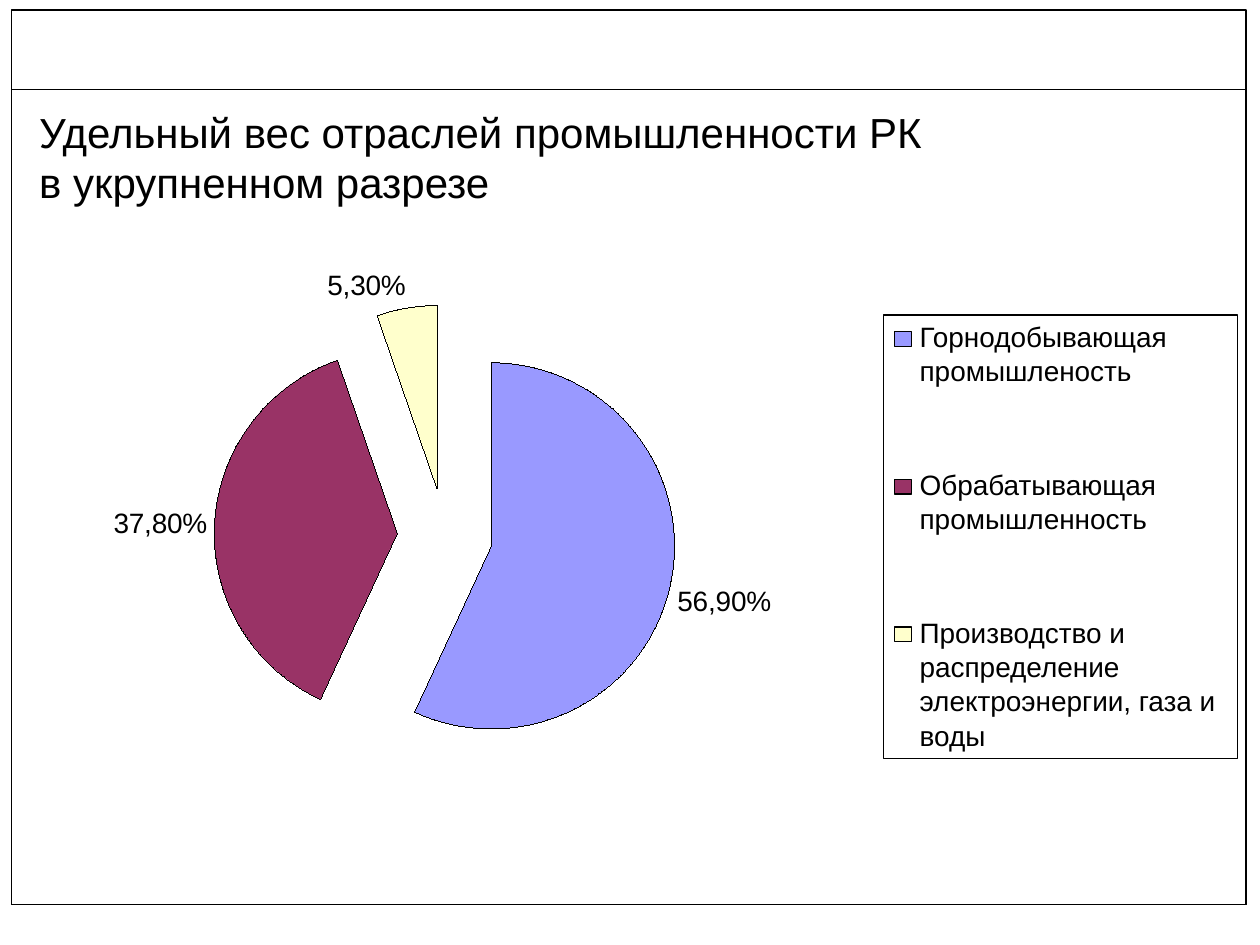
from dataclasses import dataclass

import pptx
import pptx.chart.data
import pptx.dml.color
import pptx.enum.chart
import pptx.enum.shapes
import pptx.enum.text
import pptx.oxml
import pptx.util
from pptx.util import Cm, Pt


@dataclass(frozen=True)
class Theme:
    """Colours, font and type sizes of the slide."""
    font: str = "Arial"
    ink: str = "000000"
    paper: str = "FFFFFF"
    title_size: int = 24
    body_size: int = 16
    title_leading: float = 29
    body_leading: float = 19.6
    hairline: float = 0


THEME = Theme()
TITLE = "Удельный вес отраслей промышленности РК\nв укрупненном разрезе"
SECTORS = [
    ("Горнодобывающая\nпромышленость", 0.569, "9999FF"),
    ("Обрабатывающая\nпромышленность", 0.378, "993366"),
    ("Производство и\nраспределение\nэлектроэнергии, газа и\nводы", 0.053, "FFFFCC"),
]
EXPLOSION = 26
PLOT_DIAMETER = 9.3


def rgb(value):
    """Return a colour object for a hexadecimal string."""
    return pptx.dml.color.RGBColor.from_string(value)


def outline(line):
    """Give a line format the thin dark stroke."""
    line.color.rgb = rgb(THEME.ink)
    line.width = Pt(THEME.hairline)


def write_text(shape, text, *, size, leading):
    """Fill a shape with one formatted paragraph per line of text."""
    frame = shape.text_frame
    frame.margin_left = frame.margin_right = 0
    frame.margin_top = frame.margin_bottom = 0
    frame.vertical_anchor = pptx.enum.text.MSO_ANCHOR.TOP
    frame.auto_size = pptx.enum.text.MSO_AUTO_SIZE.NONE
    frame.word_wrap = False
    frame.text = text
    for paragraph in frame.paragraphs:
        paragraph.alignment = pptx.enum.text.PP_ALIGN.LEFT
        paragraph.line_spacing = Pt(leading)
        paragraph.space_before = Pt(0)
        for run in paragraph.runs:
            run.font.name = THEME.font
            run.font.size = Pt(size)
            run.font.color.rgb = rgb(THEME.ink)


def add_title(slide, text):
    """Place and format the title placeholder."""
    title = slide.shapes.title
    title.left, title.top = Cm(0.79), Cm(2.13)
    title.width, title.height = Cm(18.2), Cm(2.06)
    write_text(title, text, size=THEME.title_size, leading=THEME.title_leading)


def add_box(slide, left, top, width, height, fill=None):
    """Draw an outlined rectangle, filled when a colour is given."""
    box = slide.shapes.add_shape(
        pptx.enum.shapes.MSO_SHAPE.RECTANGLE,
        Cm(left), Cm(top), Cm(width), Cm(height))
    box.shadow.inherit = False
    if fill:
        box.fill.solid()
        box.fill.fore_color.rgb = rgb(fill)
    else:
        box.fill.background()
    outline(box.line)


def set_pie_layout(chart, width, height):
    """Centre the plot in the chart and pull its slices apart."""
    share_x, share_y = PLOT_DIAMETER / width, PLOT_DIAMETER / height
    namespace = 'xmlns:c="http://schemas.openxmlformats.org/drawingml/2006/chart"'
    plot_area = chart._chartSpace.chart.plotArea
    for layout in plot_area.findall(pptx.oxml.ns.qn("c:layout")):
        plot_area.remove(layout)
    plot_area.insert(0, pptx.oxml.parse_xml(
        f'<c:layout {namespace}><c:manualLayout><c:layoutTarget val="inner"/>'
        '<c:xMode val="edge"/><c:yMode val="edge"/>'
        f'<c:x val="{(1 - share_x) / 2:.3f}"/><c:y val="{(1 - share_y) / 2:.3f}"/>'
        f'<c:w val="{share_x:.3f}"/><c:h val="{share_y:.3f}"/>'
        '</c:manualLayout></c:layout>'))
    first_point = plot_area.find(".//" + pptx.oxml.ns.qn("c:dPt"))
    first_point.addprevious(
        pptx.oxml.parse_xml(f'<c:explosion {namespace} val="{EXPLOSION}"/>'))


def add_pie(slide, left, top, width, height):
    """Add the exploded pie chart with percentage labels."""
    data = pptx.chart.data.CategoryChartData()
    data.categories = [name.replace("\n", " ") for name, _, _ in SECTORS]
    data.add_series("Удельный вес", [share for _, share, _ in SECTORS])
    chart = slide.shapes.add_chart(
        pptx.enum.chart.XL_CHART_TYPE.PIE,
        Cm(left), Cm(top), Cm(width), Cm(height), data).chart
    chart.has_title = False
    chart.has_legend = False
    chart.font.name = THEME.font
    chart.font.size = Pt(THEME.body_size)
    chart.font.color.rgb = rgb(THEME.ink)
    plot = chart.plots[0]
    plot.vary_by_categories = True
    for index, (_, _, color) in enumerate(SECTORS):
        point_format = plot.series[0].points[index].format
        point_format.fill.solid()
        point_format.fill.fore_color.rgb = rgb(color)
        outline(point_format.line)
    plot.has_data_labels = True
    labels = plot.data_labels
    labels.show_value = True
    labels.number_format = "[$-419]0.00%"
    labels.number_format_is_linked = False
    labels.position = pptx.enum.chart.XL_LABEL_POSITION.OUTSIDE_END
    set_pie_layout(chart, width, height)


def add_legend(slide, left, top, step):
    """Draw the framed legend with evenly spaced entries."""
    add_box(slide, left, top, 7.14, 8.94, THEME.paper)
    for index, (name, _, color) in enumerate(SECTORS):
        entry_top = top + index * step
        add_box(slide, left + 0.23, entry_top + 0.33, 0.33, 0.3, color)
        label = slide.shapes.add_textbox(
            Cm(left + 0.73), Cm(entry_top + 0.08), Cm(6.4),
            Pt(THEME.body_leading * len(name.split("\n"))))
        write_text(label, name, size=THEME.body_size, leading=THEME.body_leading)


def main():
    """Build and save the slide."""
    presentation = pptx.Presentation()
    presentation.slide_width, presentation.slide_height = Cm(25.4), Cm(19.05)
    slide = presentation.slides.add_slide(presentation.slide_layouts[5])
    add_title(slide, TITLE)
    add_box(slide, 0.23, 1.8, 24.89, 16.43)
    add_pie(slide, 1.37, 5, 15.2, 11.6)
    add_legend(slide, 17.81, 6.35, 2.98)
    add_box(slide, 0.23, 0.2, 24.89, 18.03)
    presentation.save("out.pptx")


if __name__ == "__main__":
    main()
